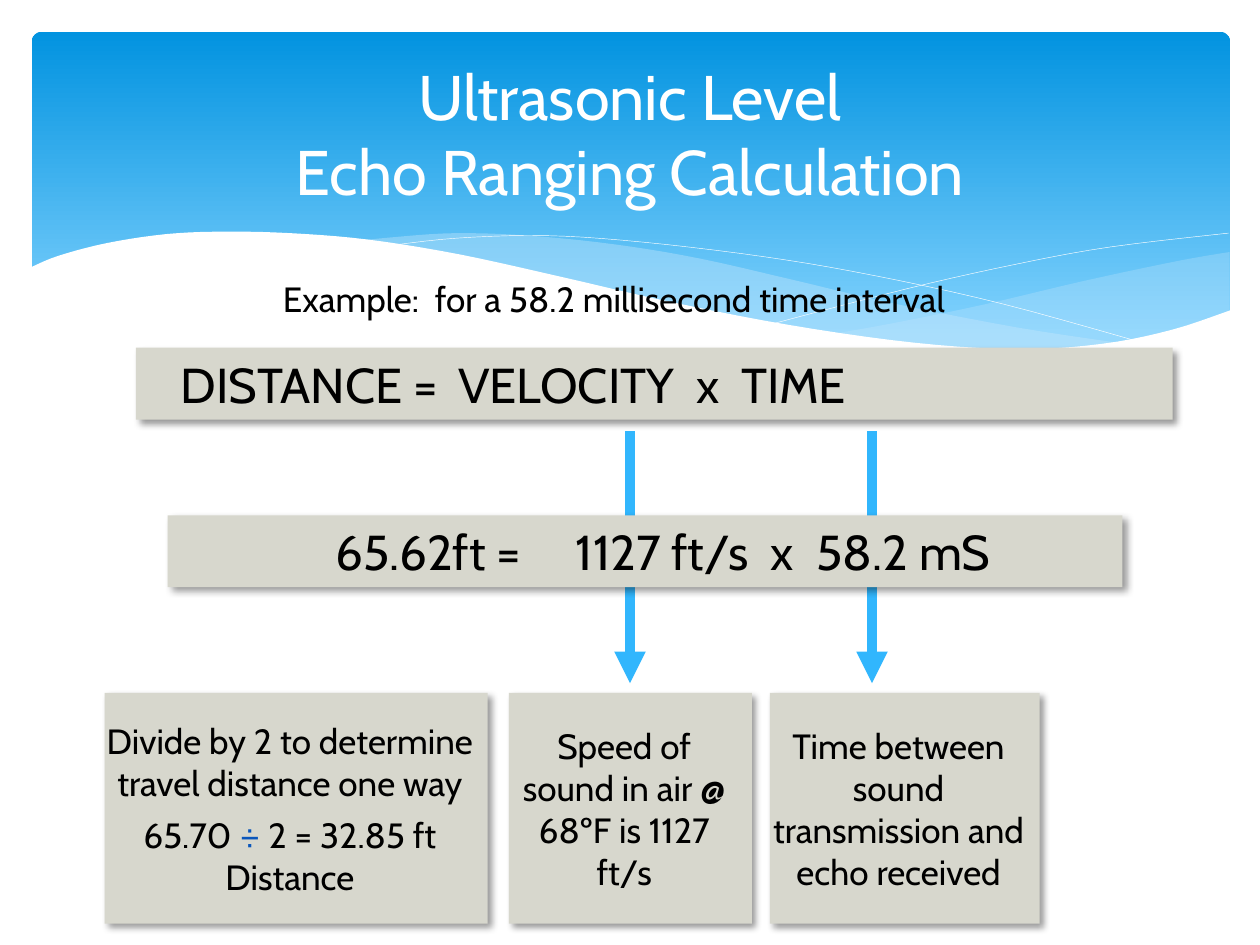
"""Builds the slide on the ultrasonic echo ranging calculation."""
from lxml.etree import SubElement
from pptx import Presentation
from pptx.dml.color import RGBColor
from pptx.enum.shapes import MSO_CONNECTOR as LINK, MSO_SHAPE as SHAPE
from pptx.enum.text import MSO_ANCHOR as ANCHOR, PP_ALIGN as ALIGN
from pptx.oxml.ns import qn
from pptx.util import Cm, Pt

COLORS = {
    "sky": "0293E0", "sky_light": "83D3FE", "wave": "C6E7FC", "white": "FFFFFF",
    "arrow": "31B6FD", "panel": "D7D7CD", "text": "000000", "accent": "0A56BB",
}
FONT = "Cabin"

RIGHT_WAVE = [
    [(24.79, 5.08), (23.75, 5.26), (21.87, 5.66), (19.79, 6.15), (17.93, 6.53),
     (16.79, 6.73)],
    [(16.79, 6.73), (18.26, 6.91), (19.84, 7.04), (20.93, 7.04), (22.15, 6.96),
     (23.39, 6.73), (24.1, 6.53), (24.79, 6.27)],
]
MIDDLE_WAVE = [
    [(22.68, 6.93), (20.5, 6.6), (17.93, 6.1), (15.98, 5.64), (14.1, 5.21),
     (12.42, 4.93), (10.67, 4.75), (9.17, 4.7), (7.95, 4.78), (7.26, 4.85)],
    [(7.26, 4.85), (8.69, 5.05), (10.26, 5.36), (12.47, 5.89), (14.38, 6.3),
     (16.1, 6.63), (17.65, 6.86), (19.33, 7.04), (20.78, 7.06), (22.68, 6.93)],
]
FALLING_LINE = [
    [(7.85, 4.95), (9.22, 4.8), (11, 4.75), (12.95, 4.88), (15.44, 5.18),
     (17.65, 5.56), (20.19, 6.12), (23.04, 6.91)],
]
RISING_LINE = [
    [(15.57, 6.53), (18.29, 5.82), (20.47, 5.33), (22.38, 4.98), (24.77, 4.7)],
]
WHITE_WAVE = [
    [(24.82, 6.25), (23.62, 6.65), (22.23, 6.93), (20.55, 7.04), (18.44, 6.91),
     (15.9, 6.55), (13.44, 6.07), (11.35, 5.59), (9.27, 5.13), (7.42, 4.83),
     (5.84, 4.7), (4.5, 4.67), (3.35, 4.72), (2.16, 4.9), (1.17, 5.16), (0.58, 5.41)],
    [(0.58, 5.41), (0.58, 8.36)],
    [(0.58, 8.36), (24.82, 8.36)],
]


def rgb(name):
    """Return a named colour."""
    return RGBColor.from_string(COLORS[name])


def smooth(knots, steps=5):
    """Return points on a Catmull-Rom curve through the knots."""
    ends = [knots[0], *knots, knots[-1]]
    points = [knots[0]]
    for a, b, c, d in zip(ends, ends[1:], ends[2:], ends[3:]):
        for step in range(1, steps + 1):
            t = step / steps
            points.append(tuple(
                0.5 * (2 * q + (r - p) * t + (2 * p - 5 * q + 4 * r - s) * t ** 2
                       + (3 * q - p - 3 * r + s) * t ** 3)
                for p, q, r, s in zip(a, b, c, d)))
    return points


def add_curve(page, curves, fill=None, opacity=100):
    """Draw a filled wave, or a thin white line when no fill is given."""
    points = [(Cm(x), Cm(y)) for knots in curves for x, y in smooth(knots)]
    builder = page.shapes.build_freeform(*points[0], scale=1.0)
    builder.add_line_segments(points[1:], close=fill is not None)
    wave = builder.convert_to_shape()
    wave.shadow.inherit = False
    if fill is None:
        wave.fill.background()
        wave.line.color.rgb = rgb("white")
        wave.line.width = Pt(0.25)
        return
    wave.line.fill.background()
    wave.fill.solid()
    wave.fill.fore_color.rgb = rgb(fill)
    if opacity < 100:
        color = wave.fill._xPr.find(".//" + qn("a:srgbClr"))
        SubElement(color, qn("a:alpha"), val=str(opacity * 1000))


def add_banner(page):
    """Draw the blue gradient banner and its waves."""
    banner = page.shapes.add_shape(
        SHAPE.ROUNDED_RECTANGLE, Cm(0.64), Cm(0.64), Cm(24.16), Cm(6.86))
    banner.adjustments[0] = 0.03
    banner.shadow.inherit = False
    banner.line.fill.background()
    banner.fill.gradient()
    banner.fill.gradient_angle = 270
    stops = zip(banner.fill.gradient_stops, ("sky", "sky_light"), (0, 0.9))
    for stop, color, position in stops:
        stop.color.rgb = rgb(color)
        stop.position = position
    add_curve(page, RIGHT_WAVE, "wave", 29)
    add_curve(page, MIDDLE_WAVE, "wave", 40)
    add_curve(page, FALLING_LINE)
    add_curve(page, RISING_LINE)
    add_curve(page, WHITE_WAVE, "white")


def add_arrow(page, x):
    """Draw a thick downward arrow."""
    arrow = page.shapes.add_connector(LINK.STRAIGHT, Cm(x), Cm(8.69), Cm(x), Cm(13.77))
    arrow.line.color.rgb = rgb("arrow")
    arrow.line.width = Pt(6)
    SubElement(arrow.line._get_or_add_ln(), qn("a:tailEnd"), type="triangle")
    SubElement(arrow._element.spPr, qn("a:effectLst"))


def write(box, paragraphs, size, color="text", align=ALIGN.CENTER, tabs=()):
    """Fill a box with paragraphs given as lists of (text, colour) or text."""
    frame = box.text_frame
    frame.word_wrap = True
    for index, spans in enumerate(paragraphs):
        para = frame.add_paragraph() if index else frame.paragraphs[0]
        para.alignment = align
        if index:
            para.space_before = Pt(6)
        if tabs:
            tab_list = SubElement(para._p.get_or_add_pPr(), qn("a:tabLst"))
            for tab in tabs:
                SubElement(tab_list, qn("a:tab"), pos=str(Cm(tab)), algn="l")
        for item in spans:
            text, tint = item if isinstance(item, tuple) else (item, color)
            if text == "\n":
                para.add_line_break()
                continue
            span = para.add_run()
            span.text = text
            span.font.name = FONT
            span.font.size = Pt(size)
            span.font.color.rgb = rgb(tint)


def add_label(page, place, spans, size, color="text"):
    """Add a plain centred text box."""
    box = page.shapes.add_textbox(*map(Cm, place))
    box.text_frame.vertical_anchor = ANCHOR.MIDDLE
    write(box, [spans], size, color)


def add_panel(page, place, paragraphs, size=20, indent=0, **layout):
    """Add a grey panel with a soft shadow and text."""
    box = page.shapes.add_shape(SHAPE.RECTANGLE, *map(Cm, place))
    box.fill.solid()
    box.fill.fore_color.rgb = rgb("panel")
    box.line.fill.background()
    box.shadow.inherit = False
    effects = box._element.spPr.find(qn("a:effectLst"))
    shadow = SubElement(effects, qn("a:outerShdw"), blurRad=str(Pt(4)), dist=str(Pt(3)),
                        dir="2700000", algn="tl", rotWithShape="0")
    shade = SubElement(shadow, qn("a:srgbClr"), val=COLORS["text"])
    SubElement(shade, qn("a:alpha"), val="40000")
    box.text_frame.margin_left = Cm(indent)
    box.text_frame.vertical_anchor = ANCHOR.MIDDLE
    write(box, paragraphs, size, **layout)


def main():
    """Build and save the deck."""
    deck = Presentation()
    deck.slide_width, deck.slide_height = Cm(25.4), Cm(19.05)
    page = deck.slides.add_slide(deck.slide_layouts[6])
    add_banner(page)
    for x in (12.7, 17.58):
        add_arrow(page, x)
    add_label(page, (1.27, 0.94, 22.86, 3.48),
              ["Ultrasonic Level", "\n", "Echo Ranging Calculation"], 36, "white")
    add_panel(page, (2.74, 7.01, 20.9, 1.45), [["DISTANCE =\tVELOCITY\tx\tTIME"]], 28,
              indent=0.9, align=ALIGN.LEFT, tabs=(5.6, 10.41, 11.3))
    add_panel(page, (3.38, 10.39, 19.25, 1.45), [["65.62ft =\t1127 ft/s\tx\t58.2 mS"]], 28,
              indent=3.38, align=ALIGN.LEFT, tabs=(4.85, 8.78, 9.7))
    top, height = 13.97, 4.65
    add_panel(page, (10.26, top, 4.9, height),
              [["Speed of sound in air @ 68ºF is 1127 ft/s"]])
    add_panel(page, (15.52, top, 5.44, height),
              [["Time between sound transmission and echo received"]])
    add_panel(page, (2.11, top, 7.72, height), [
        ["Divide by 2 to determine travel distance one way"],
        ["65.70 ", ("÷ ", "accent"), "2 = 32.85 ft Distance"],
    ])
    add_label(page, (0, 5.46, 24.76, 1.12),
              ["Example:  for a 58.2 millisecond time interval"], 20)
    deck.save("out.pptx")


if __name__ == "__main__":
    main()
